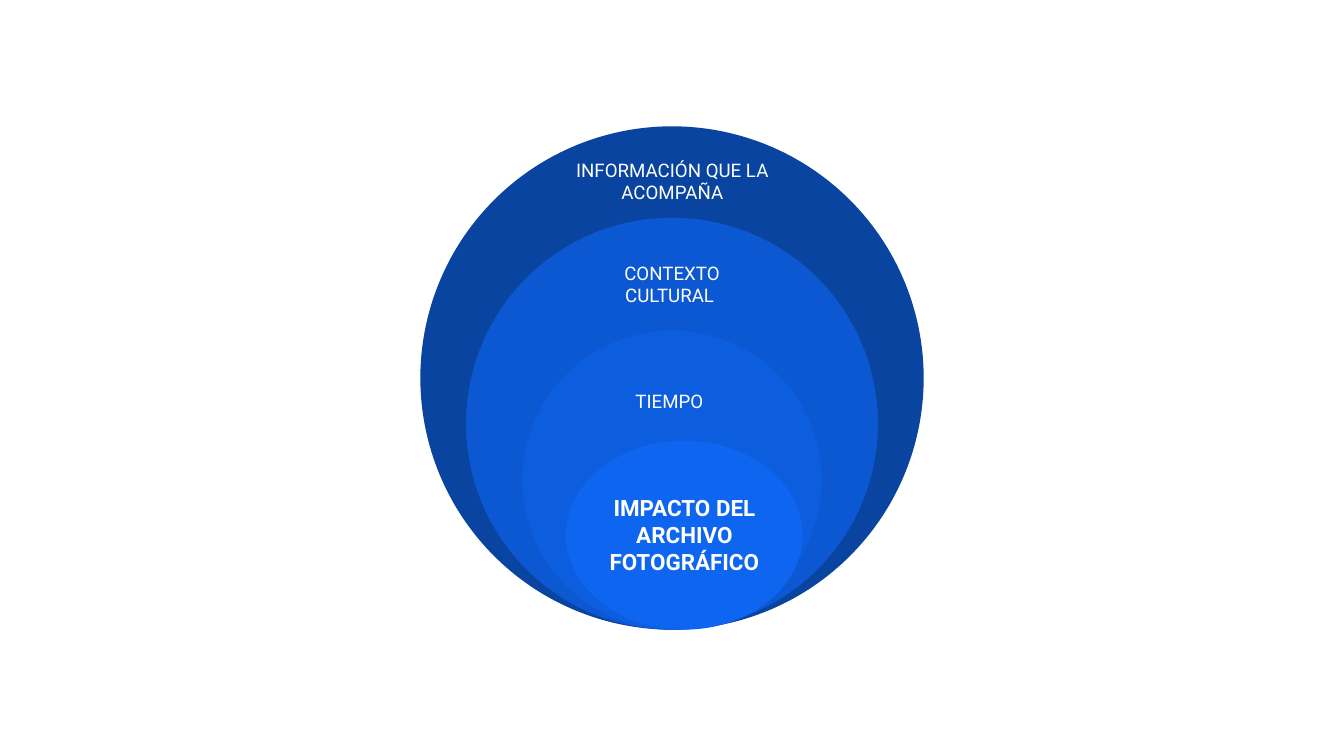
from pptx import Presentation
from pptx.dml.color import RGBColor
from pptx.enum.shapes import MSO_SHAPE
from pptx.enum.text import MSO_ANCHOR, PP_ALIGN
from pptx.util import Inches, Pt

COLORS = {
    "navy": "0944A1",
    "royal": "0C58D3",
    "blue": "0D5DDF",
    "bright": "0E65F0",
    "white": "FFFFFF",
}
FONT = "Roboto"
BASELINE = 9.37  # all ellipses rest on this line
PADDING = 0.2

# From the outside in; ellipse is (centre x, width, height),
# label box is (left, top, width, height), all in inches.
LAYERS = [
    {"text": "INFORMACIÓN QUE LA ACOMPAÑA", "color": "navy",
     "ellipse": (10, 7.49, 7.49), "label": (8.17, 2.04, 3.67, 1.31)},
    {"text": "CONTEXTO CULTURAL ", "color": "royal",
     "ellipse": (10, 6.13, 6.13), "label": (8.5, 3.69, 3, 1.07)},
    {"text": "TIEMPO ", "color": "blue",
     "ellipse": (10, 4.45, 4.45), "label": (8.59, 5.46, 2.81, 1.02)},
    {"text": "IMPACTO DEL ARCHIVO FOTOGRÁFICO", "color": "bright",
     "ellipse": (10.18, 3.52, 2.81), "label": (8.72, 7.34, 2.93, 1.24),
     "size": 24, "bold": True},
]


def add_ellipse(slide, center, width, height, color):
    shape = slide.shapes.add_shape(
        MSO_SHAPE.OVAL, Inches(center - width / 2), Inches(BASELINE - height),
        Inches(width), Inches(height))
    shape.shadow.inherit = False
    shape.fill.solid()
    shape.fill.fore_color.rgb = RGBColor.from_string(COLORS[color])
    shape.line.fill.background()


def add_label(slide, text, box, size=20, bold=False):
    frame = slide.shapes.add_textbox(*map(Inches, box)).text_frame
    frame.word_wrap = True
    frame.vertical_anchor = MSO_ANCHOR.MIDDLE
    frame.margin_left = frame.margin_right = Inches(PADDING)
    frame.margin_top = frame.margin_bottom = Inches(PADDING)
    paragraph = frame.paragraphs[0]
    paragraph.alignment = PP_ALIGN.CENTER
    run = paragraph.add_run()
    run.text = text
    run.font.name = FONT
    run.font.size = Pt(size)
    run.font.bold = bold
    run.font.color.rgb = RGBColor.from_string(COLORS["white"])


def main():
    presentation = Presentation()
    presentation.slide_width = Inches(20)
    presentation.slide_height = Inches(11.25)
    blank_layout = presentation.slide_layouts[6]
    slide = presentation.slides.add_slide(blank_layout)
    for layer in LAYERS:
        add_ellipse(slide, *layer["ellipse"], layer["color"])
        add_label(slide, layer["text"], layer["label"],
                  size=layer.get("size", 20), bold=layer.get("bold", False))
    presentation.save("out.pptx")


if __name__ == "__main__":
    main()
